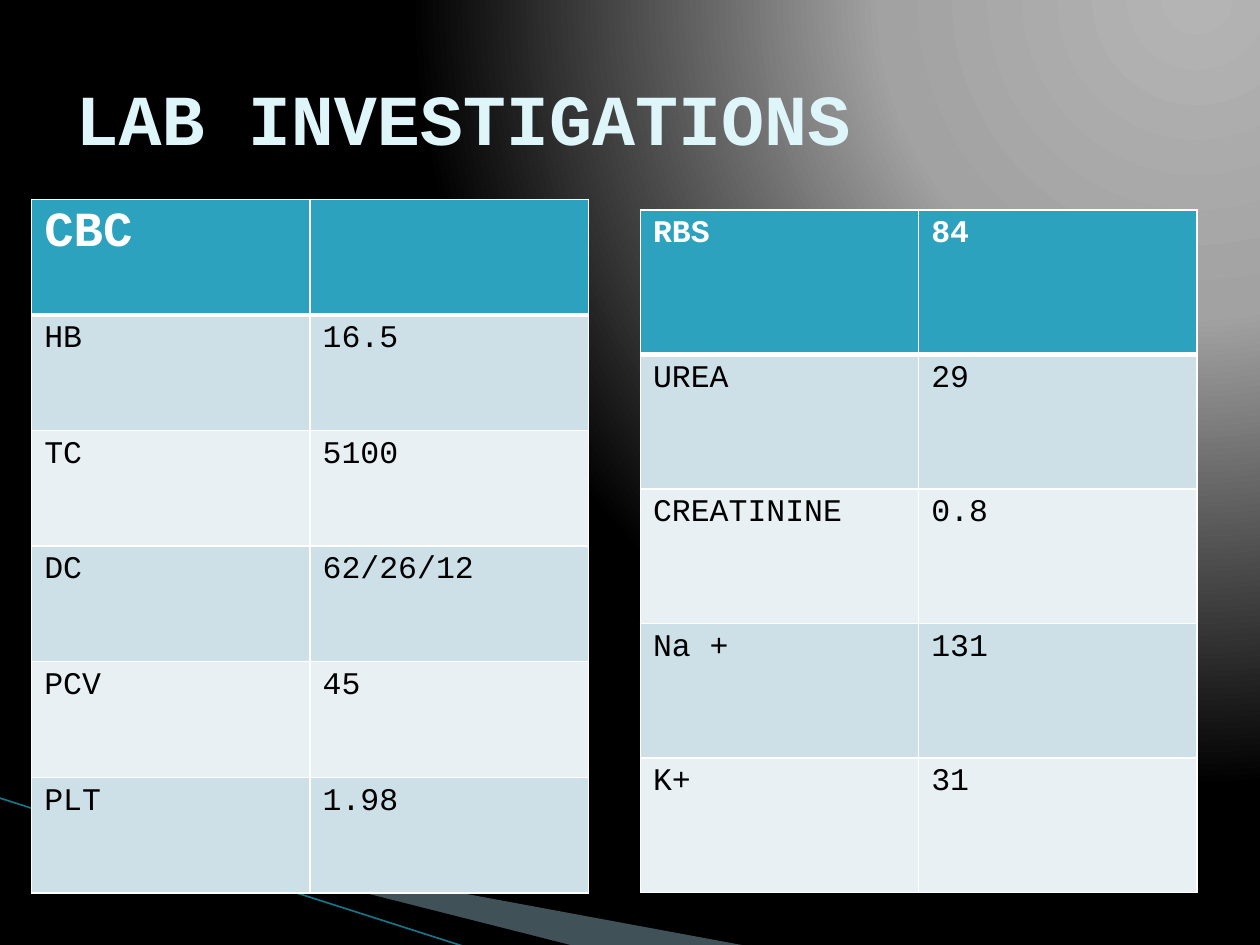
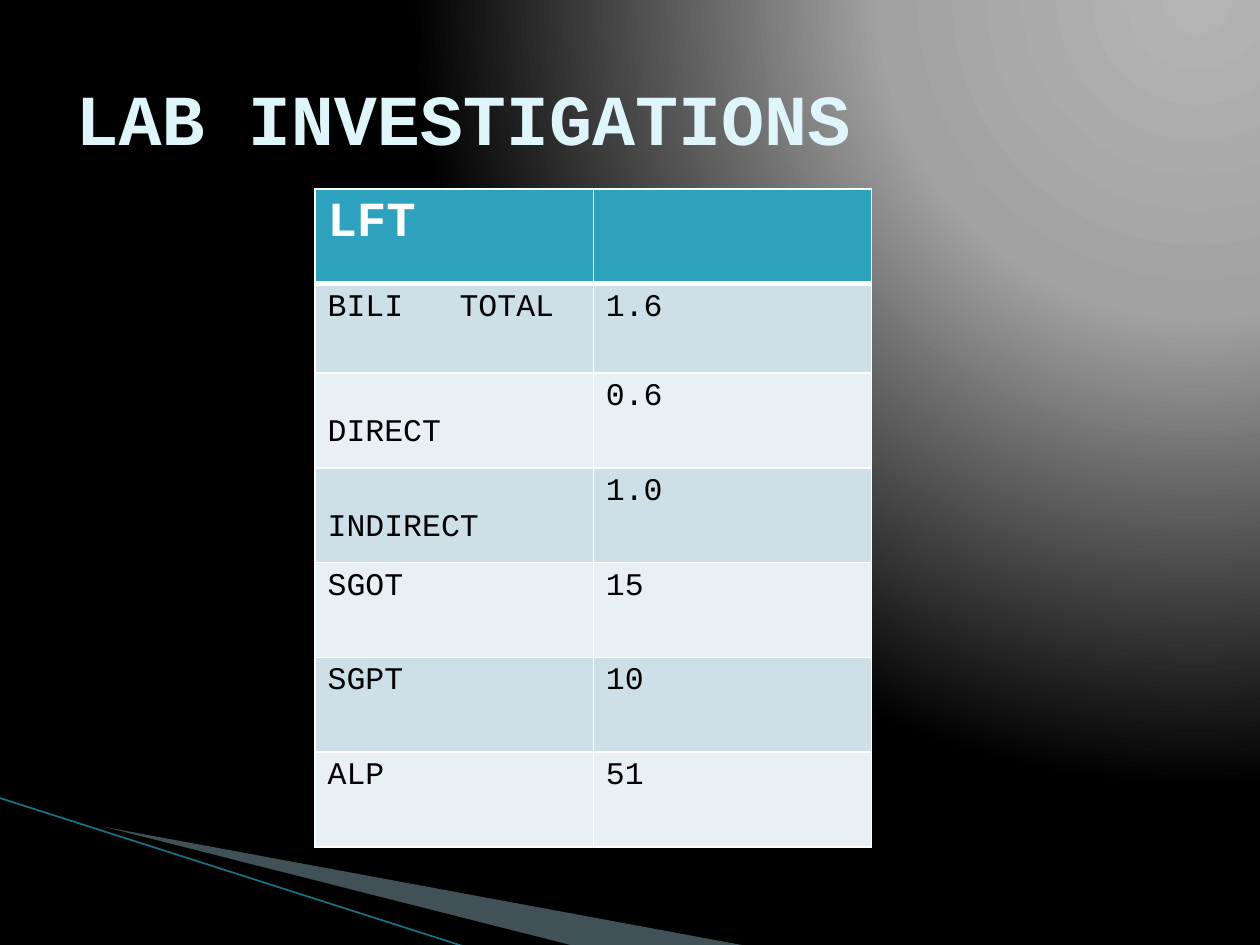
from lxml import etree
from pptx import Presentation
from pptx.dml.color import RGBColor
from pptx.enum import shapes, text
from pptx.oxml import parse_xml
from pptx.oxml.ns import nsdecls, qn
from pptx.util import Cm, Pt

COLORS = {
    "title": "DEF5FA", "header": "2DA2BF", "band_dark": "CDE0E8",
    "band_light": "E8F0F4", "white": "FFFFFF", "black": "000000",
    "wedge": "A0CBDC", "line": "187389",
    "glow": "B4B4B4", "haze": "A2A2A2",
}
FONT = "Courier New"
WIDTH, HEIGHT = 25.4, 19.05
COL_WIDTH = 5.61
MARGIN_TOP, LINE_HEIGHT = 0.13, 0.72
TAB_STOP = 2.66

CBC = [("CBC", ""), ("HB", "16.5"), ("TC", "5100"), ("DC", "62/26/12"),
       ("PCV", "45"), ("PLT", "1.98")]
CHEMISTRY = [("RBS", "84"), ("UREA", "29"), ("CREATININE", "0.8"),
             ("Na +", "131"), ("K+", "31")]
LFT = [("LFT", ""), ("BILI\tTOTAL", "1.6"), ("DIRECT", "0.6"),
       ("INDIRECT", "1.0"), ("SGOT", "15"), ("SGPT", "10"), ("ALP", "51")]


def rgb(name):
    return RGBColor.from_string(COLORS[name])


def write(tf, words, size=18, color="black", bold=False, tab=None):
    """Put one formatted, left-aligned paragraph in a text frame."""
    p = tf.paragraphs[0]
    p.alignment = text.PP_ALIGN.LEFT
    if tab:
        tabs = etree.SubElement(p._p.get_or_add_pPr(), qn("a:tabLst"))
        etree.SubElement(tabs, qn("a:tab"), pos=str(Cm(tab)), algn="l")
    r = p.add_run()
    r.text = words
    r.font.name, r.font.size, r.font.bold = FONT, Pt(size), bold
    r.font.color.rgb = rgb(color)


# Background shared through the master
def set_background(master):
    master.background.fill.gradient()
    old = next(master.element.iter(qn("a:gradFill")))
    stops = "".join(
        f'<a:gs pos="{pos}000"><a:srgbClr val="{COLORS[name]}"/></a:gs>'
        for pos, name in ((0, "glow"), (40, "haze"), (100, "black")))
    grad = parse_xml(
        f'<a:gradFill {nsdecls("a")} rotWithShape="1"><a:gsLst>{stops}</a:gsLst>'
        '<a:path path="circle"><a:fillToRect l="95000" t="-106000" r="5000" b="206000"/>'
        '</a:path></a:gradFill>')
    old.getparent().replace(old, grad)


# Corner decoration
def set_frame(sp, left, top, width, height):
    """Give a freeform a new frame while its outline stays in place."""
    dx, dy = sp.left - Cm(left), sp.top - Cm(top)
    sp.left, sp.top, sp.width, sp.height = Cm(left), Cm(top), Cm(width), Cm(height)
    outline = next(sp._element.iter(qn("a:path")))
    outline.set("w", str(sp.width))
    outline.set("h", str(sp.height))
    for pt in outline.iter(qn("a:pt")):
        pt.set("x", str(int(pt.get("x")) + dx))
        pt.set("y", str(int(pt.get("y")) + dy))


def add_wedge(slide, points, frame, color, alpha=100):
    start, *rest = [(Cm(x), Cm(y)) for x, y in points]
    builder = slide.shapes.build_freeform(*start)
    builder.add_line_segments(rest, close=True)
    sp = builder.convert_to_shape()
    set_frame(sp, *frame)
    sp.shadow.inherit = False
    sp.line.fill.background()
    sp.fill.solid()
    sp.fill.fore_color.rgb = rgb(color)
    if alpha < 100:
        clr = next(sp._element.spPr.iter(qn("a:srgbClr")))
        etree.SubElement(clr, qn("a:alpha"), val=f"{alpha}000")


def add_line(slide, x1, y1, x2, y2):
    cxn = slide.shapes.add_connector(
        shapes.MSO_CONNECTOR.STRAIGHT, Cm(x1), Cm(y1), Cm(x2), Cm(y2))
    cxn.line.color.rgb = rgb("line")
    cxn.line.width = Pt(0.95)
    etree.SubElement(cxn._element.spPr, qn("a:effectLst"))


def add_slide(prs, title):
    slide = prs.slides.add_slide(prs.slide_layouts[5])
    add_wedge(slide, [(1.4, 16.54), (15.11, 19.08), (11.58, 19.08), (1.4, 16.51)],
              (1.98, 13.89, 10.57, 4.01), "wedge", 40)
    add_wedge(slide, [(1.35, 16.48), (11.61, 19.08), (9.45, 19.1), (1.37, 16.51)],
              (-0.15, 16.08, 10.57, 2.34), "black")
    add_line(slide, -0.03, 16.08, 9.42, 19.1)
    sp = slide.shapes.title
    sp.left, sp.top, sp.width, sp.height = Cm(1.27), Cm(0.76), Cm(22.86), Cm(3.18)
    sp.text_frame.vertical_anchor = text.MSO_ANCHOR.MIDDLE
    write(sp.text_frame, title, size=41, color="title", bold=True)
    return slide


# Result tables
def set_borders(cell, **widths):
    tc_pr = cell._tc.get_or_add_tcPr()
    for side in "LRTB":
        ln = etree.SubElement(tc_pr, qn(f"a:ln{side}"), w=str(Pt(widths.get(side, 1))))
        fill = etree.SubElement(ln, qn("a:solidFill"))
        etree.SubElement(fill, qn("a:srgbClr"), val=COLORS["white"])


def add_results(slide, left, top, rows, heights, header_size=18, lowered=()):
    """Two-column table; labels in lowered start one line further down."""
    table = slide.shapes.add_table(
        len(rows), 2, Cm(left), Cm(top), Cm(2 * COL_WIDTH), Cm(sum(heights))).table
    for col in table.columns:
        col.width = Cm(COL_WIDTH)
    for i, (values, height) in enumerate(zip(rows, heights)):
        table.rows[i].height = Cm(height)
        for j, value in enumerate(values):
            cell = table.cell(i, j)
            set_borders(cell, B=3 if i == 0 else 1, T=3 if i == 1 else 1)
            cell.fill.solid()
            band = "band_dark" if i % 2 else "band_light"
            cell.fill.fore_color.rgb = rgb(band if i else "header")
            shift = LINE_HEIGHT if value in lowered else 0
            cell.margin_top = Cm(MARGIN_TOP + shift)
            if value:
                write(cell.text_frame, value, size=18 if i else header_size,
                      color="black" if i else "white", bold=i == 0,
                      tab=TAB_STOP if "\t" in value else None)


def main():
    prs = Presentation()
    prs.slide_width, prs.slide_height = Cm(WIDTH), Cm(HEIGHT)
    set_background(prs.slide_master)

    # Blood count and chemistry
    slide = add_slide(prs, "LAB INVESTIGATIONS")
    add_results(slide, 0.64, 4.02, CBC, [2.33] * 6, header_size=28)
    add_results(slide, 12.91, 4.23, CHEMISTRY, [2.92] + [2.71] * 4)

    # Liver function
    slide = add_slide(prs, "LAB INVESTIGATIONS")
    add_results(slide, 6.35, 3.81, LFT, [1.91, 1.8] + [1.91] * 5,
                header_size=28, lowered=("DIRECT", "INDIRECT"))

    prs.save("out.pptx")


if __name__ == "__main__":
    main()
